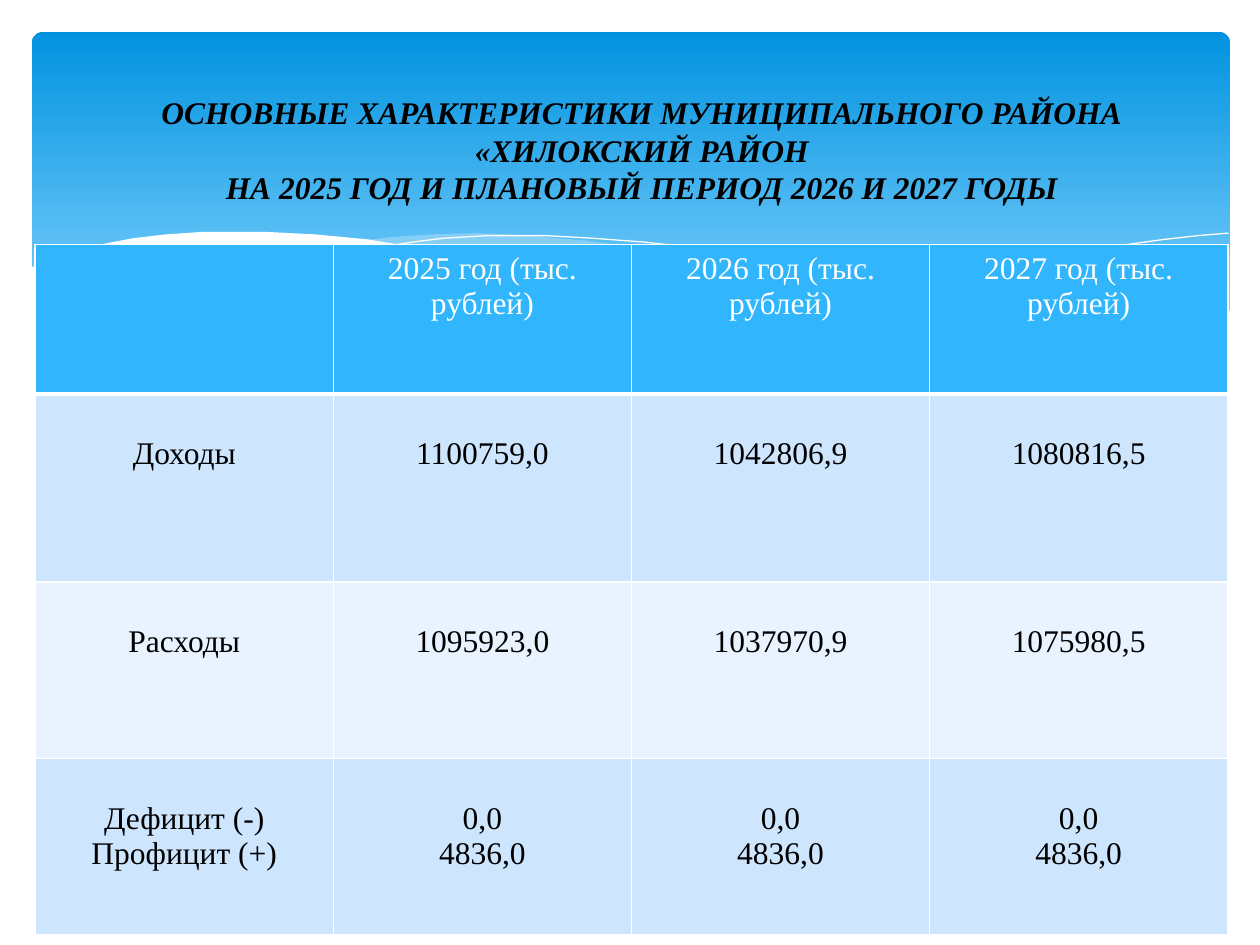
from lxml import etree
from pptx import Presentation
from pptx.dml.color import RGBColor
from pptx.enum.shapes import MSO_SHAPE
from pptx.enum.text import MSO_ANCHOR, PP_ALIGN
from pptx.oxml.ns import qn
from pptx.util import Cm, Pt

ROUNDED = MSO_SHAPE.ROUNDED_RECTANGLE
CENTER = PP_ALIGN.CENTER
MIDDLE = MSO_ANCHOR.MIDDLE

WHITE = RGBColor(0xFF, 0xFF, 0xFF)
BLACK = RGBColor(0x00, 0x00, 0x00)
SKY_TOP = RGBColor(0x02, 0x93, 0xE0)
SKY_BOTTOM = RGBColor(0x83, 0xD3, 0xFE)
MIST = RGBColor(0xC6, 0xE7, 0xFC)
HEADER_BLUE = RGBColor(0x31, 0xB6, 0xFD)
BAND_DARK = RGBColor(0xCE, 0xE5, 0xFE)
BAND_LIGHT = RGBColor(0xE8, 0xF3, 0xFF)

FONT = "Times New Roman"
TITLE_FORMAT = {"name": FONT, "size": Pt(18), "bold": True, "italic": True}
CELL_FORMAT = {"name": FONT, "size": Pt(18), "bold": False}
TITLE = ("ОСНОВНЫЕ ХАРАКТЕРИСТИКИ МУНИЦИПАЛЬНОГО РАЙОНА «ХИЛОКСКИЙ РАЙОН\v"
         "НА 2025 ГОД И ПЛАНОВЫЙ ПЕРИОД 2026 И 2027 ГОДЫ")
BUDGET = [
    ["", "2025 год (тыс. рублей)", "2026 год (тыс. рублей)", "2027 год (тыс.\nрублей)"],
    ["Доходы", "1100759,0", "1042806,9", "1080816,5"],
    ["Расходы", "1095923,0", "1037970,9", "1075980,5"],
    ["Дефицит (-)\nПрофицит (+)"] + ["0,0\n4836,0"] * 3,
]
ROW_HEIGHTS = [3.01, 3.79, 3.56, 3.56]
COLUMN_WIDTH = 6.01

WAVE_UNIT = Cm(2.54) / 100
RIGHT_MIST = [
    (975, 200), (935, 207), (891, 216), (832, 230), (779, 242), (729, 253),
    (661, 265), (705, 271), (757, 276), (803, 278), (844, 277), (881, 273),
    (913, 267), (942, 259), (976, 247), (976, 200),
]
MIDDLE_MIST = [
    (893, 273), (837, 265), (775, 254), (706, 240), (629, 222), (584, 211),
    (541, 203), (502, 196), (465, 191), (420, 187), (380, 185), (344, 186),
    (313, 188), (286, 191), (323, 196), (362, 203), (404, 211), (449, 222),
    (530, 240), (601, 255), (665, 266), (722, 274), (773, 277), (818, 278),
    (857, 277), (893, 273),
]
LONG_CREST = [
    (309, 195), (328, 192), (353, 189), (387, 187), (433, 187), (469, 189),
    (510, 192), (556, 197), (608, 204), (665, 213), (727, 226), (795, 241),
    (869, 261), (907, 272),
]
RIGHT_CREST = [
    (613, 257), (653, 246), (695, 235), (748, 223), (806, 210), (866, 199),
    (895, 194), (924, 190), (951, 187), (975, 185),
]
WHITE_WAVE = [
    (977, 246), (930, 262), (875, 273), (809, 277), (726, 272), (648, 262),
    (555, 245), (447, 220), (391, 207), (340, 197), (316, 194), (292, 190),
    (271, 188), (250, 186), (230, 185), (211, 184), (161, 184), (132, 186),
    (106, 189), (85, 193), (67, 197), (46, 203), (23, 213), (23, 329), (977, 329),
]


def apply_format(target, values):
    """Set each named attribute of the target."""
    for name, value in values.items():
        setattr(target, name, value)


def write_text(text_frame, text, values, color):
    """Fill a text frame with centred paragraphs in one format."""
    text_frame.word_wrap = True
    text_frame.text = text
    for paragraph in text_frame.paragraphs:
        paragraph.alignment = CENTER
        for run in paragraph.runs:
            apply_format(run.font, values)
            run.font.color.rgb = color


def add_sky(slide):
    """Add the rounded panel with its vertical gradient."""
    sky = slide.shapes.add_shape(ROUNDED, Cm(0.64), Cm(0.64), Cm(24.16), Cm(6.86))
    sky.adjustments[0] = 0.034
    sky.shadow.inherit = False
    sky.line.fill.background()
    sky.fill.gradient()
    sky.fill.gradient_angle = 270
    for stop, color, position in zip(sky.fill.gradient_stops, (SKY_TOP, SKY_BOTTOM), (0, 0.9)):
        stop.color.rgb = color
        stop.position = position


def add_outline(slide, points, close):
    """Add a freeform through the points without a shadow."""
    builder = slide.shapes.build_freeform(*points[0], scale=WAVE_UNIT)
    builder.add_line_segments(points[1:], close=close)
    shape = builder.convert_to_shape()
    shape.shadow.inherit = False
    return shape


def add_wave(slide, points, color, opacity=100):
    """Add a filled wave with the given opacity in percent."""
    wave = add_outline(slide, points, True)
    wave.line.fill.background()
    wave.fill.solid()
    wave.fill.fore_color.rgb = color
    if opacity < 100:
        color_element = wave.fill._xPr.find(qn("a:solidFill"))[0]
        etree.SubElement(color_element, qn("a:alpha"), val=str(opacity * 1000))


def add_crest(slide, points):
    """Add a white hairline along a wave."""
    crest = add_outline(slide, points, False)
    crest.fill.background()
    crest.line.color.rgb = WHITE
    crest.line.width = Pt(0)


def set_borders(cell, bottom_width):
    """Draw white borders around a cell."""
    properties = cell._tc.get_or_add_tcPr()
    for side, width in (("L", 1), ("R", 1), ("T", 1), ("B", bottom_width)):
        line = etree.SubElement(properties, qn("a:ln" + side), w=str(Pt(width)))
        fill = etree.SubElement(line, qn("a:solidFill"))
        etree.SubElement(fill, qn("a:srgbClr"), val=str(WHITE))


def add_budget_table(slide):
    """Add the table of income, spending and balance."""
    columns = len(BUDGET[0])
    table = slide.shapes.add_table(
        len(BUDGET), columns, Cm(0.71), Cm(4.93),
        Cm(COLUMN_WIDTH * columns), Cm(sum(ROW_HEIGHTS))).table
    for column in table.columns:
        column.width = Cm(COLUMN_WIDTH)
    for row_index, (row, height) in enumerate(zip(table.rows, ROW_HEIGHTS)):
        row.height = Cm(height)
        is_header = row_index == 0
        band = BAND_DARK if row_index % 2 else BAND_LIGHT
        for cell, text in zip(row.cells, BUDGET[row_index]):
            set_borders(cell, 3 if is_header else 1)
            cell.fill.solid()
            cell.fill.fore_color.rgb = HEADER_BLUE if is_header else band
            cell.margin_top = Cm(0.13 if is_header else 0.86)
            write_text(cell.text_frame, text, CELL_FORMAT, WHITE if is_header else BLACK)


def add_title(slide):
    """Add the heading over the panel."""
    title = slide.shapes.add_textbox(Cm(1.14), Cm(1.73), Cm(23.6), Cm(2.57))
    title.text_frame.vertical_anchor = MIDDLE
    write_text(title.text_frame, TITLE, TITLE_FORMAT, BLACK)


def main():
    """Build and save the presentation."""
    presentation = Presentation()
    presentation.slide_width = Cm(25.4)
    presentation.slide_height = Cm(19.05)
    slide = presentation.slides.add_slide(presentation.slide_layouts[6])
    add_sky(slide)
    add_wave(slide, RIGHT_MIST, MIST, 29)
    add_wave(slide, MIDDLE_MIST, MIST, 40)
    add_crest(slide, LONG_CREST)
    add_crest(slide, RIGHT_CREST)
    add_wave(slide, WHITE_WAVE, WHITE)
    add_budget_table(slide)
    add_title(slide)
    presentation.save("out.pptx")


if __name__ == "__main__":
    main()
